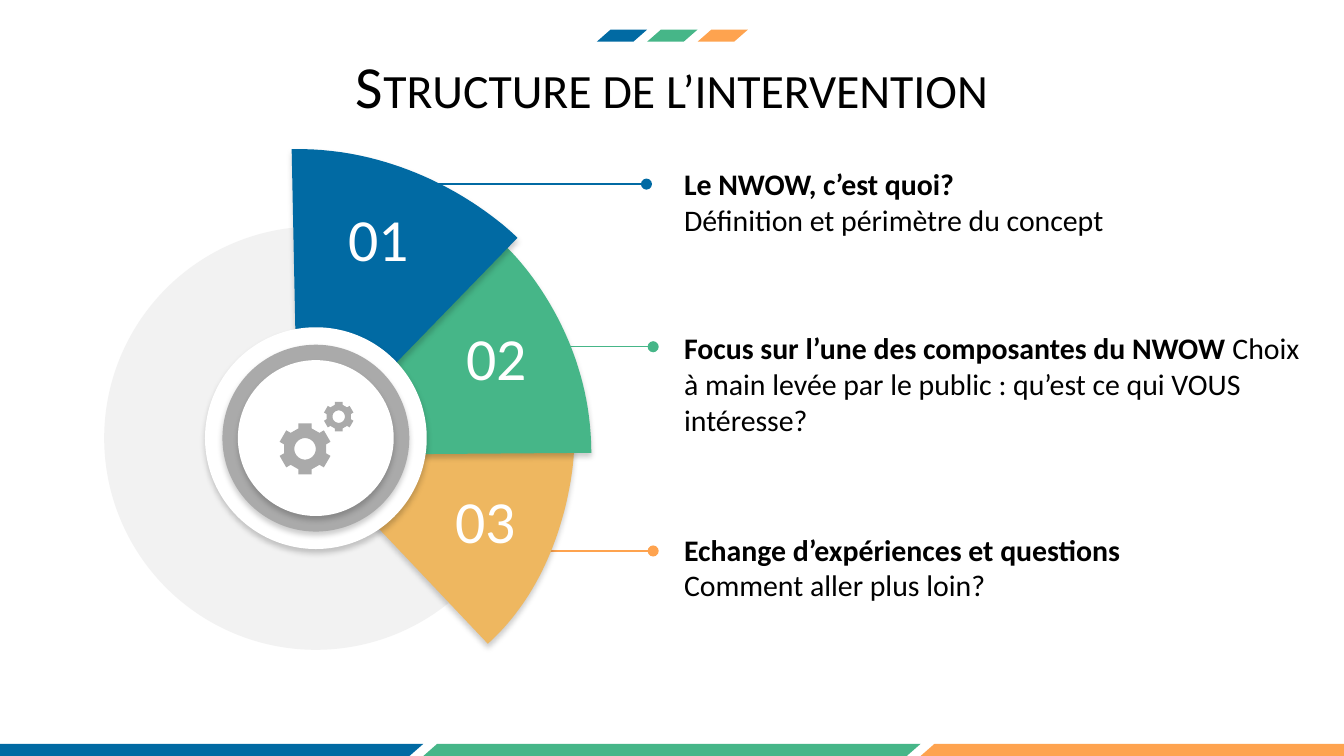
"""Build the agenda slide: a fan of three numbered sectors with their topics."""
import math

import lxml.etree
import pptx
import pptx.dml.color
import pptx.enum.shapes
import pptx.enum.text
import pptx.oxml
import pptx.oxml.ns
import pptx.util

Inches = pptx.util.Inches
SHAPE = pptx.enum.shapes.MSO_SHAPE
ANCHOR = pptx.enum.text.MSO_ANCHOR
ALIGN = pptx.enum.text.PP_ALIGN

WIDTH = 10
HEIGHT = WIDTH * 9 / 16
COLORS = {"blue": "016AA3", "green": "46B688", "orange": "FEA34F", "sand": "EEB760",
          "pale": "F2F2F2", "gray": "AAAAAA", "white": "FFFFFF", "black": "000000"}
TITLE = "Structure de l’intervention"
ACCENTS = ["blue", "green", "orange"]
STRIPE_HEIGHT = 0.09
STRIPES = [(-0.55, HEIGHT - STRIPE_HEIGHT, 3.7), (4.44, 0.22, 0.375)]
TOPICS = [
    {"box": (5.09, 1.23, 4.72, 0.54),
     "text": [[("Le NWOW, c’est quoi?", True)],
              [("Définition et périmètre du concept", False)]]},
    {"box": (5.09, 2.45, 4.59, 0.81),
     "text": [[("Focus sur l’une des composantes du NWOW ", True),
               ("Choix à main levée par le public : qu’est ce qui VOUS intéresse?", False)]]},
    {"box": (5.09, 3.95, 4.08, 0.54),
     "text": [[("Echange d’expériences et questions", True)],
              [("Comment aller plus loin?", False)]]},
]
LEADERS = [(2.76, 4.81, 1.37), (4.03, 4.86, 2.58), (3.98, 4.86, 4.1)]
SECTORS = [
    {"color": "blue", "corners": [(2.2, 2.58), (2.86, 2.79), (3.85, 1.77)],
     "control": (3.19, 1.09), "end": (2.17, 1.11), "number": ("01", 2.39, 1.5)},
    {"color": "green", "corners": [(3.04, 3.38), (2.83, 2.78), (3.69, 1.78), (3.78, 1.85)],
     "control": (4.4, 2.43), "end": (4.4, 3.37), "number": ("02", 3.27, 2.39)},
    {"color": "sand", "corners": [(2.73, 3.84), (3.04, 3.38), (4.28, 3.27), (4.27, 3.37)],
     "control": (4.24, 4.24), "end": (3.63, 4.79), "number": ("03", 3.19, 3.6)},
]
HUB = (2.35, 3.26)
RINGS = [(1.65, "white"), (1.39, "gray"), (1.16, "white")]
GEARS = [(2.27, 3.34, 0.19), (2.52, 3.1, 0.11)]
TOOTH = [(-0.26, -0.8), (-0.26, -1), (0.26, -1), (0.26, -0.8)]


def rgb(name):
    return pptx.dml.color.RGBColor.from_string(COLORS[name])


def paint(sp, color, shadow=False):
    sp.shadow.inherit = False
    sp.fill.solid()
    sp.fill.fore_color.rgb = rgb(color)
    sp.line.fill.background()
    if shadow:
        effects = sp._element.spPr.find(pptx.oxml.ns.qn("a:effectLst"))
        effects.append(pptx.oxml.parse_xml(
            f'<a:outerShdw {pptx.oxml.ns.nsdecls("a")} blurRad="38100" dist="25400" '
            'dir="5400000" algn="t" rotWithShape="0"><a:srgbClr val="000000">'
            '<a:alpha val="20000"/></a:srgbClr></a:outerShdw>'))


def add_preset(slide, kind, box, color, shadow=False):
    sp = slide.shapes.add_shape(kind, *map(Inches, box))
    paint(sp, color, shadow)
    return sp


def add_circle(slide, center, size, color, shadow=False):
    box = (center[0] - size / 2, center[1] - size / 2, size, size)
    add_preset(slide, SHAPE.OVAL, box, color, shadow)


def add_outline(slide, contours, color, shadow=False):
    scaled = [[(Inches(x), Inches(y)) for x, y in points] for points in contours]
    builder = slide.shapes.build_freeform(*scaled[0][0], scale=1.0)
    builder.add_line_segments(scaled[0][1:], close=True)
    for points in scaled[1:]:
        builder.move_to(*points[0])
        builder.add_line_segments(points[1:], close=True)
    paint(builder.convert_to_shape(), color, shadow)


def arc(start, control, end, steps=40):
    points = []
    for i in range(1, steps + 1):
        t = i / steps
        u = 1 - t
        points.append(tuple((u ** 3 + 3 * u * u * t) * a + 3 * u * t * t * b + t ** 3 * c
                            for a, b, c in zip(start, control, end)))
    return points


def gear(cx, cy, radius, teeth=6, steps=48):
    rim = []
    for i in range(teeth):
        a = 2 * math.pi * i / teeth
        rim += [(cx + radius * (x * math.cos(a) - y * math.sin(a)),
                 cy + radius * (x * math.sin(a) + y * math.cos(a))) for x, y in TOOTH]
    angles = [-2 * math.pi * i / steps for i in range(steps)]
    hole = [(cx + 0.42 * radius * math.cos(a), cy + 0.42 * radius * math.sin(a)) for a in angles]
    return [rim, hole]


def add_text(slide, box, paragraphs, size, color, align=ALIGN.LEFT, anchor=ANCHOR.MIDDLE):
    sp = slide.shapes.add_textbox(*map(Inches, box))
    tf = sp.text_frame
    tf.word_wrap = True
    tf.auto_size = pptx.enum.text.MSO_AUTO_SIZE.SHAPE_TO_FIT_TEXT
    tf.vertical_anchor = anchor
    tf.margin_left = tf.margin_right = tf.margin_top = tf.margin_bottom = 0
    for i, runs in enumerate(paragraphs):
        p = tf.paragraphs[0] if i == 0 else tf.add_paragraph()
        p.alignment = align
        p.font.name = "Calibri"
        p.font.size = pptx.util.Pt(size)
        p.font.color.rgb = rgb(color)
        for text, bold in runs:
            r = p.add_run()
            r.text = text
            r.font.bold = bold
    return tf


def add_leader(slide, x1, x2, y, color):
    line = slide.shapes.add_connector(pptx.enum.shapes.MSO_CONNECTOR.STRAIGHT,
                                      Inches(x1), Inches(y), Inches(x2), Inches(y))
    line.line.color.rgb = rgb(color)
    line.line.width = pptx.util.Pt(0.75)
    ln = line.line._get_or_add_ln()
    for end in ("a:headEnd", "a:tailEnd"):
        lxml.etree.SubElement(ln, pptx.oxml.ns.qn(end), type="oval")
    lxml.etree.SubElement(line._element.spPr, pptx.oxml.ns.qn("a:effectLst"))


def main():
    prs = pptx.Presentation()
    prs.slide_width, prs.slide_height = Inches(WIDTH), Inches(HEIGHT)
    slide = prs.slides.add_slide(prs.slide_layouts[6])

    for left, top, width in STRIPES:
        for i, color in enumerate(ACCENTS):
            box = (left + i * width, top, width, STRIPE_HEIGHT)
            add_preset(slide, SHAPE.PARALLELOGRAM, box, color).adjustments[0] = 1.144

    for topic in TOPICS:
        add_text(slide, topic["box"], topic["text"], 16, "black")
    for leader, color in zip(LEADERS, ACCENTS):
        add_leader(slide, *leader, color)

    add_circle(slide, HUB, 3.15, "pale")
    for sector in reversed(SECTORS):
        corners = sector["corners"]
        outline = corners + arc(corners[-1], sector["control"], sector["end"])
        add_outline(slide, [outline], sector["color"], shadow=True)
    for size, color in RINGS:
        add_circle(slide, HUB, size, color, shadow=True)
    for sector in SECTORS:
        number, left, top = sector["number"]
        add_text(slide, (left, top, 0.85, 0.54), [[(number, False)]], 32, "white",
                 ALIGN.CENTER, ANCHOR.TOP)
    for wheel in GEARS:
        add_outline(slide, gear(*wheel), "gray")

    tf = add_text(slide, (0, 0.36, WIDTH, 0.54), [[(TITLE, False)]], 32, "black", ALIGN.CENTER)
    tf.paragraphs[0].runs[0]._r.get_or_add_rPr().set("cap", "small")
    prs.save("out.pptx")


if __name__ == "__main__":
    main()
